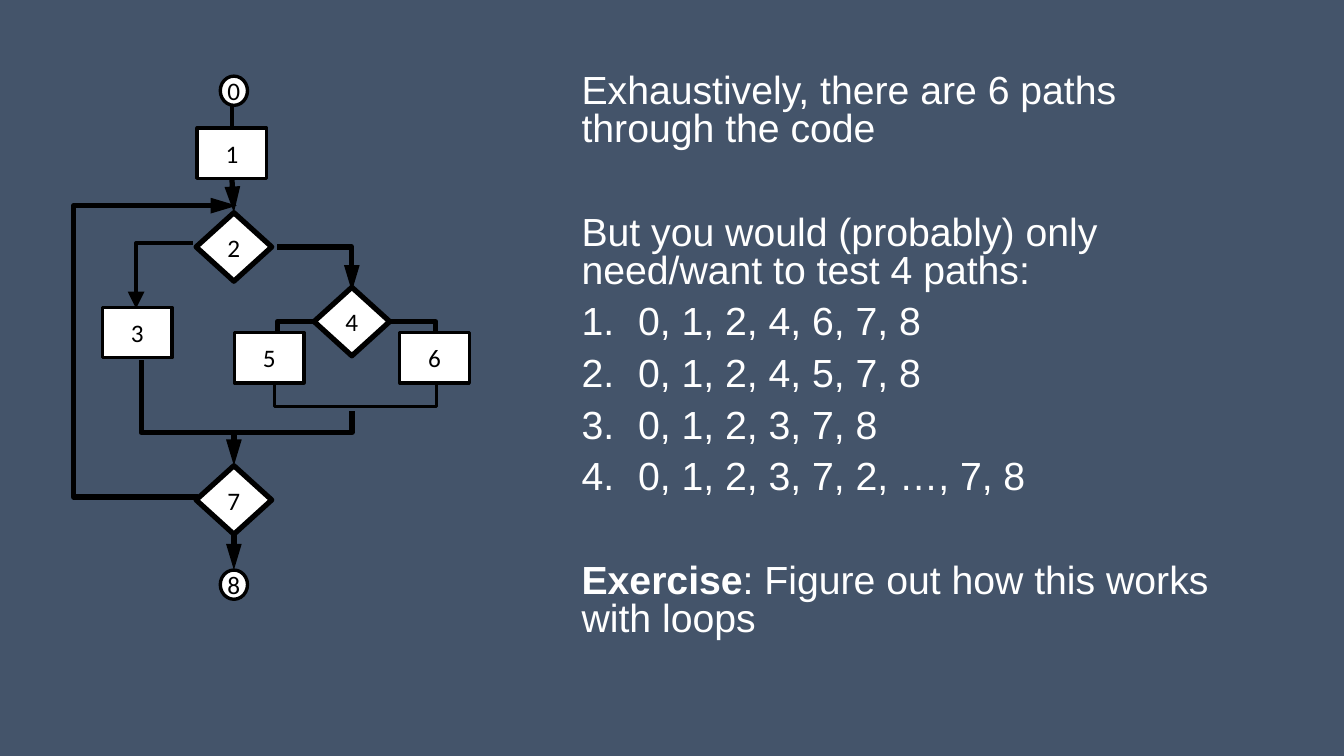
"""Build a slide pairing a control-flow graph with the paths worth testing."""
from lxml import etree
from pptx import Presentation
from pptx.dml.color import RGBColor
from pptx.enum.shapes import MSO_CONNECTOR as Connector, MSO_SHAPE as Shape
from pptx.enum.text import MSO_ANCHOR as Anchor, PP_ALIGN as Align
from pptx.oxml.ns import qn
from pptx.util import Inches, Pt

COLORS = {"background": "44546A", "text": "FFFFFF", "node": "FFFFFF", "ink": "000000"}
CELL = 0.1
SPINE = 23.2
THIN, THICK = 2.4, 3.75
TOP, BOTTOM = 0, 2
LINE_SPACING, PARAGRAPH_GAP, SECTION_GAP = 0.8, 10, 47.5

KINDS = {
    "end": (Shape.OVAL, 2.7, 2.9, THIN),
    "step": (Shape.RECTANGLE, 6.9, 5, THIN),
    "choice": (Shape.DIAMOND, 7.5, 6.8, THICK),
}
NODES = {
    "0": ("end", SPINE, 9),
    "1": ("step", SPINE - 0.2, 15.2),
    "2": ("choice", SPINE, 24.5),
    "3": ("step", 13.6, 33),
    "4": ("choice", 34.9, 31.9),
    "5": ("step", 26.7, 35.5),
    "6": ("step", 43.1, 35.5),
    "7": ("choice", SPINE, 49.6),
    "8": ("end", SPINE, 58),
}
BENT_EDGES = [
    ([(19.1, 24.1), (13.5, 24.1), (13.5, 30.6)], THIN, True),
    ([(27.5, 24.5), (34.9, 24.5), (34.9, 28.9)], THICK, True),
    ([(31.6, 31.9), (27.5, 31.9), (27.5, 36)], THICK, False),
    ([(38.7, 31.9), (43.2, 31.9), (43.2, 36)], THICK, False),
    ([(27.2, 38.2), (27.2, 40.3), (43.3, 40.3), (43.3, 38.2)], THIN, False),
    ([(34.9, 40.8), (34.9, 42.9), (14, 42.9), (14, 35.7)], THICK, False),
    ([(19.6, 49.3), (7.3, 49.3), (7.3, 20.4), (23.5, 20.4)], THICK, True),
]
TEST_PATHS = ["0, 1, 2, 4, 6, 7, 8", "0, 1, 2, 4, 5, 7, 8",
              "0, 1, 2, 3, 7, 8", "0, 1, 2, 3, 7, 2, …, 7, 8"]


def cells(count):
    """Turn grid cells into a length."""
    return Inches(count * CELL)


def color(name):
    """Look up a named colour."""
    return RGBColor.from_string(COLORS[name])


def write(paragraph, text, size=28, font="Arial", ink="text", bold=False):
    """Append formatted text to a paragraph."""
    run = paragraph.add_run()
    run.text = text
    run.font.size, run.font.name, run.font.bold = Pt(size), font, bold
    run.font.color.rgb = color(ink)


def style_line(item, weight, arrow=False):
    """Ink a line and optionally give it an arrowhead."""
    item.line.color.rgb = color("ink")
    item.line.width = Pt(weight)
    if arrow:
        width = "med" if weight == THICK else "lg"
        etree.SubElement(item._element.spPr.find(qn("a:ln")), qn("a:tailEnd"),
                         type="triangle", w=width, len="lg")


def add_node(slide, label, kind, center_x, center_y):
    """Draw a labelled node around its centre."""
    preset, width, height, weight = KINDS[kind]
    node = slide.shapes.add_shape(preset, cells(center_x - width / 2), cells(center_y - height / 2),
                                  cells(width), cells(height))
    node.shadow.inherit = False
    node.fill.solid()
    node.fill.fore_color.rgb = color("node")
    style_line(node, weight)
    frame = node.text_frame
    frame.word_wrap = False
    frame.vertical_anchor = Anchor.MIDDLE
    frame.margin_left = frame.margin_right = frame.margin_top = frame.margin_bottom = 0
    frame.paragraphs[0].alignment = Align.CENTER
    write(frame.paragraphs[0], label, size=18, font="Calibri", ink="ink")
    return node


def add_bent_edge(slide, points, weight, arrow):
    """Draw an edge that turns at right angles."""
    start, *turns = [(cells(x), cells(y)) for x, y in points]
    builder = slide.shapes.build_freeform(*start)
    builder.add_line_segments(turns, close=False)
    edge = builder.convert_to_shape()
    edge.shadow.inherit = False
    edge.fill.background()
    style_line(edge, weight, arrow)


def add_straight_edge(slide, target, source=None, start=(0, 0), weight=THICK, arrow=True):
    """Join a source node's bottom, or a point, to the top of the target node."""
    x, y = map(cells, start)
    edge = slide.shapes.add_connector(Connector.STRAIGHT, x, y, x, y)
    if source is not None:
        edge.begin_connect(source, BOTTOM)
    edge.end_connect(target, TOP)
    style_line(edge, weight, arrow)
    etree.SubElement(edge._element.spPr, qn("a:effectLst"))


def add_graph(slide):
    """Draw the control-flow graph."""
    for points, weight, arrow in BENT_EDGES:
        add_bent_edge(slide, points, weight, arrow)
    nodes = {label: add_node(slide, label, *place) for label, place in NODES.items()}
    add_straight_edge(slide, nodes["1"], start=(SPINE - 0.2, 10.4), weight=THIN, arrow=False)
    add_straight_edge(slide, nodes["2"], nodes["1"])
    add_straight_edge(slide, nodes["7"], start=(SPINE, 42.9))
    add_straight_edge(slide, nodes["8"], nodes["7"])


def add_paragraph(frame, *runs, gap=PARAGRAPH_GAP, numbered=False):
    """Add a paragraph of (text, bold) runs, numbered if asked."""
    first = not frame.paragraphs[0].runs
    paragraph = frame.paragraphs[0] if first else frame.add_paragraph()
    paragraph.line_spacing = LINE_SPACING
    paragraph.space_before = Pt(gap)
    if numbered:
        properties = paragraph._p.get_or_add_pPr()
        indent = cells(5.6)
        properties.set("marL", str(indent))
        properties.set("indent", str(-indent))
        etree.SubElement(properties, qn("a:buFont"), typeface="Arial")
        etree.SubElement(properties, qn("a:buAutoNum"), type="arabicPeriod")
    for text, bold in runs:
        write(paragraph, text, bold=bold)


def add_explanation(slide):
    """Write the text beside the graph."""
    frame = slide.shapes.add_textbox(cells(56.7), cells(6.9), cells(67.4), cells(60.6)).text_frame
    frame.word_wrap = True
    add_paragraph(frame, ("Exhaustively, there are 6 paths through the code", False))
    add_paragraph(frame, ("But you would (probably) only need/want to test 4 paths:", False),
                  gap=SECTION_GAP)
    for test_path in TEST_PATHS:
        add_paragraph(frame, (test_path, False), numbered=True)
    add_paragraph(frame, ("Exercise", True), (": Figure out how this works with loops", False),
                  gap=SECTION_GAP)


def main():
    """Create and save the presentation."""
    presentation = Presentation()
    presentation.slide_width, presentation.slide_height = Inches(13.33), Inches(7.5)
    slide = presentation.slides.add_slide(presentation.slide_layouts[6])
    slide.background.fill.solid()
    slide.background.fill.fore_color.rgb = color("background")
    add_explanation(slide)
    add_graph(slide)
    presentation.save("out.pptx")


if __name__ == "__main__":
    main()
